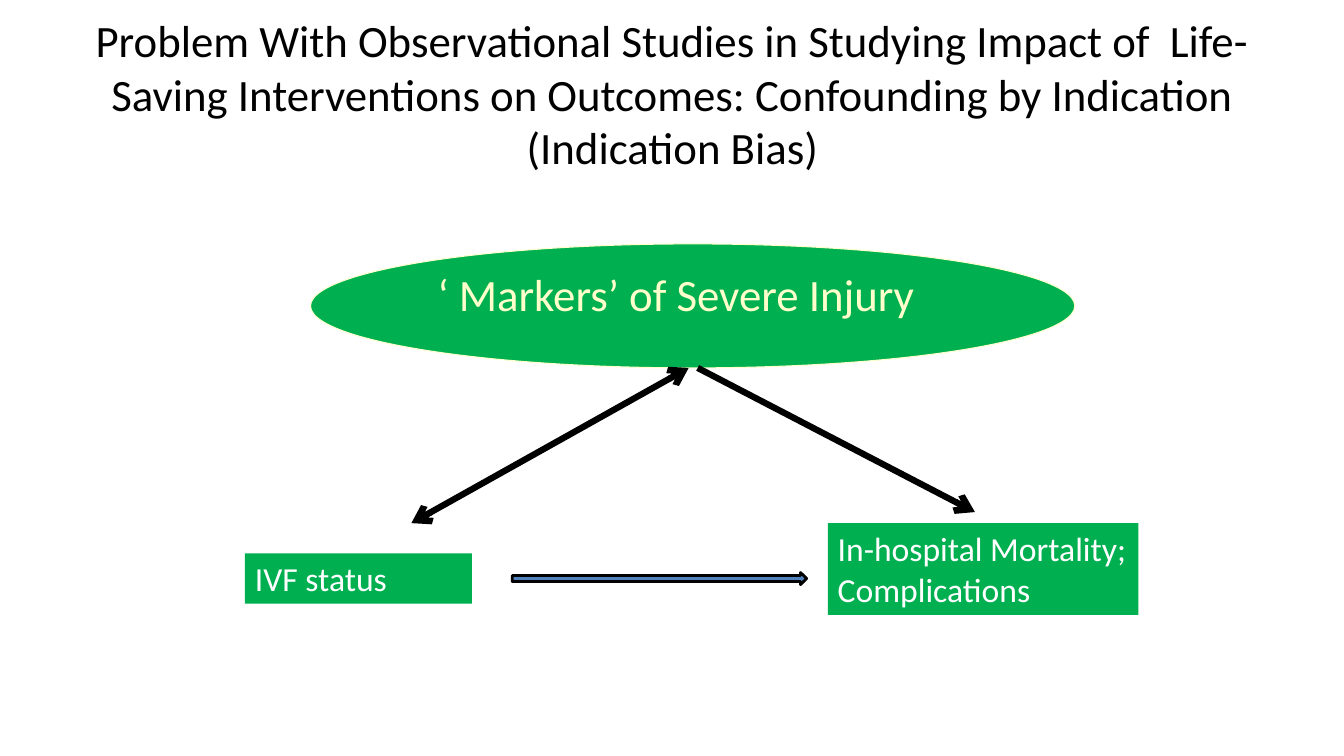
from dataclasses import dataclass
from pptx import Presentation
from pptx.dml.color import RGBColor as RGB
from pptx.enum.shapes import MSO_CONNECTOR as Conn, MSO_SHAPE as Shape
from pptx.enum.text import MSO_ANCHOR as Anchor, MSO_AUTO_SIZE as Auto, PP_ALIGN as Align
from pptx.oxml.ns import qn
from pptx.util import Inches, Pt
from lxml.etree import SubElement


@dataclass
class Theme:
    font: str = "Calibri"
    large: int = 32
    body: int = 24
    black: RGB = RGB(0x00, 0x00, 0x00)
    white: RGB = RGB(0xFF, 0xFF, 0xFF)
    cream: RGB = RGB(0xFF, 0xFF, 0xCC)
    green: RGB = RGB(0x00, 0xB0, 0x50)
    blue: RGB = RGB(0x4F, 0x81, 0xBD)


theme = Theme()


def write(sp, text, size, color, align, anchor):
    tf = sp.text_frame
    tf.text = text
    tf.word_wrap = True
    tf.auto_size = Auto.NONE
    tf.vertical_anchor = anchor
    for p in tf.paragraphs:
        p.alignment = align
        for r in p.runs:
            r.font.name = theme.font
            r.font.size = Pt(size)
            r.font.color.rgb = color


def add_node(kind, box, fill, line, width):
    sp = s.shapes.add_shape(kind, *map(Inches, box))
    sp.shadow.inherit = False
    sp.fill.solid()
    sp.fill.fore_color.rgb = fill
    if line is None:
        sp.line.fill.background()
    else:
        sp.line.color.rgb = line
        sp.line.width = Pt(width)
    return sp


prs = Presentation()
prs.slide_width, prs.slide_height = Inches(13.33), Inches(7.5)
s = prs.slides.add_slide(prs.slide_layouts[5])

title = s.shapes.title
title.left, title.top, title.width, title.height = map(Inches, (0.67, 0.3, 12, 1.25))
write(title, "Problem With Observational Studies in Studying Impact of  Life-Saving "
      "Interventions on Outcomes: Confounding by Indication (Indication Bias)",
      theme.large, theme.black, Align.CENTER, Anchor.MIDDLE)

markers = add_node(Shape.OVAL, (3.08, 2.42, 7.58, 1.23), theme.green, theme.cream, 0.75)
write(markers, "‘ Markers’ of Severe Injury", theme.large, theme.cream, Align.LEFT, Anchor.TOP)
markers.text_frame.margin_left = Inches(0.15)

for text, box in [
    ("IVF status", (2.43, 5.49, 2.25, 0.5)),
    ("In-hospital Mortality;\nComplications", (8.21, 5.19, 3.08, 0.91)),
]:
    sp = add_node(Shape.RECTANGLE, box, theme.green, None, 0)
    write(sp, text, theme.body, theme.white, Align.LEFT, Anchor.TOP)

add_node(Shape.RIGHT_ARROW, (5.08, 5.68, 2.92, 0.12), theme.blue, theme.black, 2)

for start, end, heads in [
    ((6.92, 3.65), (9.67, 5.08), ["a:tailEnd"]),
    ((6.83, 3.65), (4.08, 5.19), ["a:headEnd", "a:tailEnd"]),
]:
    link = s.shapes.add_connector(Conn.STRAIGHT, *map(Inches, start + end))
    link.line.color.rgb = theme.black
    link.line.width = Pt(4.5)
    for head in heads:
        SubElement(link.line._get_or_add_ln(), qn(head), type="arrow")
    SubElement(link._element.spPr, qn("a:effectLst"))

prs.save("out.pptx")
